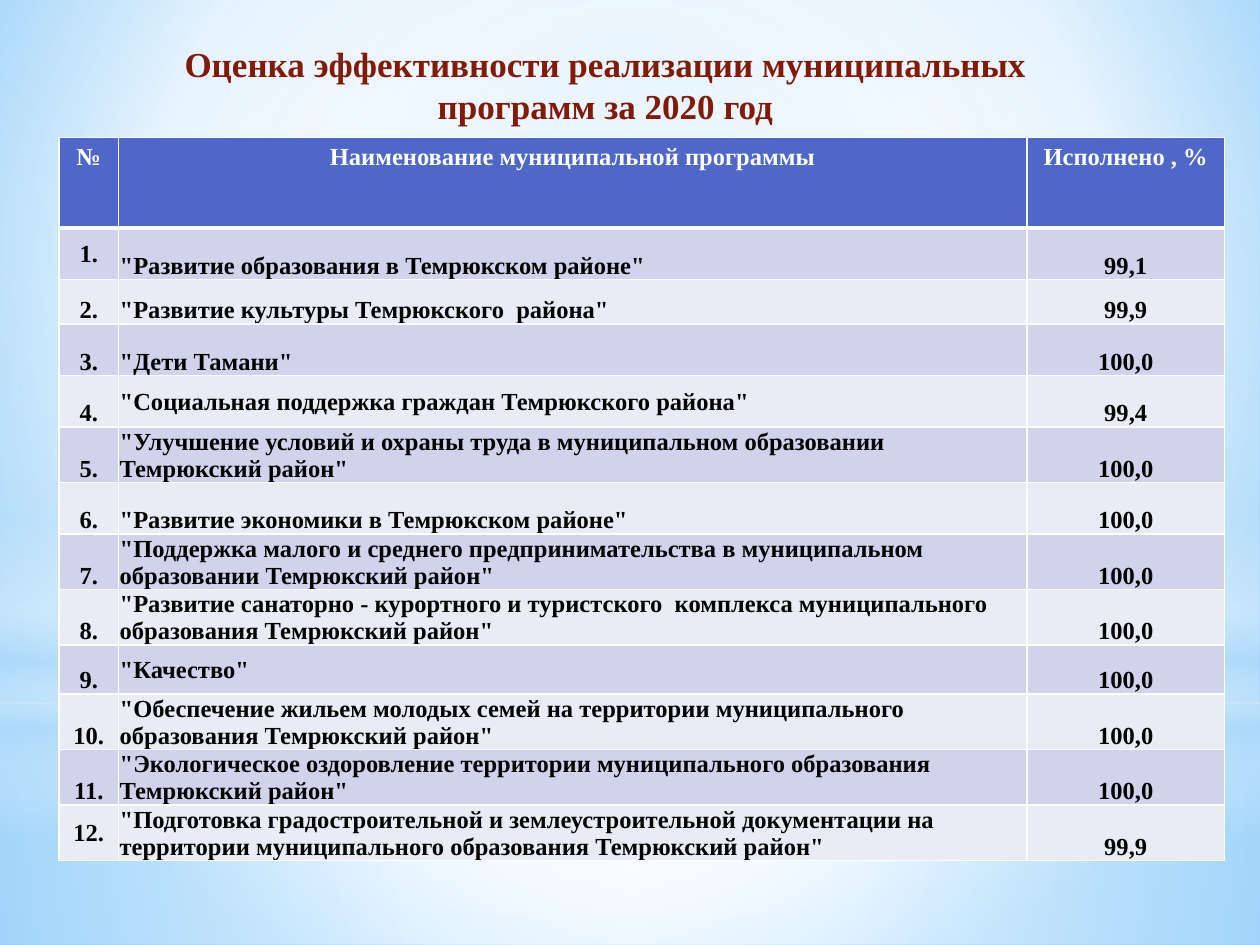
import pptx
import pptx.util
from lxml import etree
from pptx.dml.color import RGBColor
from pptx.enum.shapes import MSO_SHAPE
from pptx.enum.text import MSO_ANCHOR, PP_ALIGN
from pptx.oxml.ns import qn

Inches = pptx.util.Inches
FONT = "Times New Roman"
WHITE = RGBColor(0xFF, 0xFF, 0xFF)
BLACK = RGBColor(0x00, 0x00, 0x00)
TITLE_RED = RGBColor(0x82, 0x1A, 0x08)
HEADER_BLUE = RGBColor(0x4E, 0x67, 0xC8)
BANDS = (RGBColor(0xD0, 0xD3, 0xEB), RGBColor(0xE9, 0xEB, 0xF5))
PALE_BLUE = RGBColor(0xB4, 0xDC, 0xFA)
SKY = RGBColor(0x9E, 0xD5, 0xFF)
DEEP_SKY = RGBColor(0x5B, 0xB9, 0xFF)

TITLE = "Оценка эффективности реализации муниципальных программ за 2020 год"
HEADERS = ("№", "Наименование муниципальной программы", "Исполнено , %")
PROGRAMS = (
    ("Развитие образования в Темрюкском районе", "99,1"),
    ("Развитие культуры Темрюкского  района", "99,9"),
    ("Дети Тамани", "100,0"),
    ("Социальная поддержка граждан Темрюкского района", "99,4"),
    ("Улучшение условий и охраны труда в муниципальном образовании Темрюкский район", "100,0"),
    ("Развитие экономики в Темрюкском районе", "100,0"),
    ("Поддержка малого и среднего предпринимательства в муниципальном "
     "образовании Темрюкский район", "100,0"),
    ("Развитие санаторно - курортного и туристского  комплекса муниципального "
     "образования Темрюкский район", "100,0"),
    ("Качество", "100,0"),
    ("Обеспечение жильем молодых семей на территории муниципального "
     "образования Темрюкский район", "100,0"),
    ("Экологическое оздоровление территории муниципального образования "
     "Темрюкский район", "100,0"),
    ("Подготовка градостроительной и землеустроительной документации на "
     "территории муниципального образования Темрюкский район", "99,9"),
)
COLUMN_WIDTHS = (0.47, 7.21, 1.57)
HEADER_HEIGHT, ROW_HEIGHT = 0.72, 0.41
SHORT_ROWS = {2: 0.35, 9: 0.39}
MIDDLE_NUMBERS = {1, 12}
MIDDLE_NAMES = {4, 7, 8, 9, 10, 11}


def add_child(parent, tag, **attributes):
    child = etree.SubElement(parent, qn(tag))
    for name, value in attributes.items():
        child.set(name, str(value))
    return child


def set_gradient(fill, root, stops, center=None):
    """Fill with (position, colour, opacity) stops: circular, or downwards without a center."""
    fill.solid()
    solid = next(root.iter(qn("a:solidFill")))
    gradient = etree.Element(qn("a:gradFill"), rotWithShape="1")
    stop_list = add_child(gradient, "a:gsLst")
    for position, color, opacity in stops:
        stop = add_child(stop_list, "a:gs", pos=position * 1000)
        tint = add_child(stop, "a:srgbClr", val=color)
        if opacity < 100:
            add_child(tint, "a:alpha", val=opacity * 1000)
    if center:
        circle = add_child(gradient, "a:path", path="circle")
        sides = {side: share * 1000 for side, share in zip("ltrb", center)}
        add_child(circle, "a:fillToRect", **sides)
    else:
        add_child(gradient, "a:lin", ang=90 * 60000, scaled=0)
    solid.getparent().replace(solid, gradient)


def add_backdrop(page, width, height):
    """Sky gradient with soft layers of light, placed as shares of the page height."""
    set_gradient(page.background.fill, page.element,
                 ((0, SKY, 100), (60, WHITE, 100), (100, DEEP_SKY, 100)), (20, 10, 20, 60))
    middle = (50, 50, 50, 50)
    layers = (
        (MSO_SHAPE.RECTANGLE, 0.744, 0.256, middle,
         ((0, WHITE, 91), (37, WHITE, 76), (100, PALE_BLUE, 79))),
        (MSO_SHAPE.RECTANGLE, 0, 0.744, middle,
         ((0, WHITE, 89), (48, WHITE, 62), (100, PALE_BLUE, 79))),
        (MSO_SHAPE.RECTANGLE, 0.55, 0.333, None,
         ((0, WHITE, 0), (29, WHITE, 30), (45, PALE_BLUE, 40),
          (55, WHITE, 26), (65, PALE_BLUE, 60), (100, WHITE, 0))),
        (MSO_SHAPE.OVAL, 0.233, 0.744, middle, ((0, WHITE, 100), (56, WHITE, 0))),
    )
    for kind, top, share, center, stops in layers:
        layer = page.shapes.add_shape(kind, 0, int(height * top), width, int(height * share))
        layer.shadow.inherit = False
        layer.line.fill.background()
        set_gradient(layer.fill, layer.element, stops, center)


def style_paragraph(para, size, color, align):
    para.alignment = align
    para.font.name = FONT
    para.font.size = pptx.util.Pt(size)
    para.font.bold = True
    para.font.color.rgb = color


def add_title(page, left, top, width, height):
    box = page.shapes.add_textbox(left, top, width, height)
    box.text_frame.word_wrap = True
    box.text_frame.text = TITLE
    style_paragraph(box.text_frame.paragraphs[0], 20, TITLE_RED, PP_ALIGN.CENTER)


def set_borders(cell, bottom):
    properties = cell._tc.get_or_add_tcPr()
    for index, (side, points) in enumerate((("L", 1), ("R", 1), ("T", 1), ("B", bottom))):
        line = etree.Element(qn("a:ln" + side), w=str(points * 12700))
        add_child(add_child(line, "a:solidFill"), "a:srgbClr", val=WHITE)
        properties.insert(index, line)


def fill_cell(cell, text, fill, color, align, bottom=1):
    cell.text = text
    cell.fill.solid()
    cell.fill.fore_color.rgb = fill
    style_paragraph(cell.text_frame.paragraphs[0], 14, color, align)
    set_borders(cell, bottom)


def add_program_table(page, left, top):
    heights = [HEADER_HEIGHT]
    heights += [SHORT_ROWS.get(number, ROW_HEIGHT) for number in range(1, len(PROGRAMS) + 1)]
    table = page.shapes.add_table(len(heights), len(HEADERS), left, top,
                                  Inches(sum(COLUMN_WIDTHS)), Inches(sum(heights))).table
    for column, width in zip(table.columns, COLUMN_WIDTHS):
        column.width = Inches(width)
    for row, height in zip(table.rows, heights):
        row.height = Inches(height)

    # Header row
    for cell, text in zip(table.rows[0].cells, HEADERS):
        fill_cell(cell, text, HEADER_BLUE, WHITE, PP_ALIGN.CENTER, bottom=3)

    # Program rows
    aligns = (PP_ALIGN.CENTER, PP_ALIGN.LEFT, PP_ALIGN.CENTER)
    for number, (name, percent) in enumerate(PROGRAMS, 1):
        texts = (f"{number}.", f'"{name}"', percent)
        centered = (number in MIDDLE_NUMBERS, number in MIDDLE_NAMES, False)
        for cell, text, align, middle in zip(table.rows[number].cells, texts, aligns, centered):
            fill_cell(cell, text, BANDS[(number - 1) % 2], BLACK, align)
            cell.vertical_anchor = MSO_ANCHOR.MIDDLE if middle else MSO_ANCHOR.BOTTOM
            cell.margin_left = cell.margin_right = cell.margin_top = Inches(0.01)
            cell.margin_bottom = 0


def main():
    deck = pptx.Presentation()
    deck.slide_width, deck.slide_height = Inches(10), Inches(7.5)
    page = deck.slides.add_slide(deck.slide_layouts[6])
    add_backdrop(page, deck.slide_width, deck.slide_height)
    add_program_table(page, Inches(0.47), Inches(1.09))
    add_title(page, Inches(0.86), Inches(0.29), Inches(7.89), Inches(0.77))
    deck.save("out.pptx")


if __name__ == "__main__":
    main()
